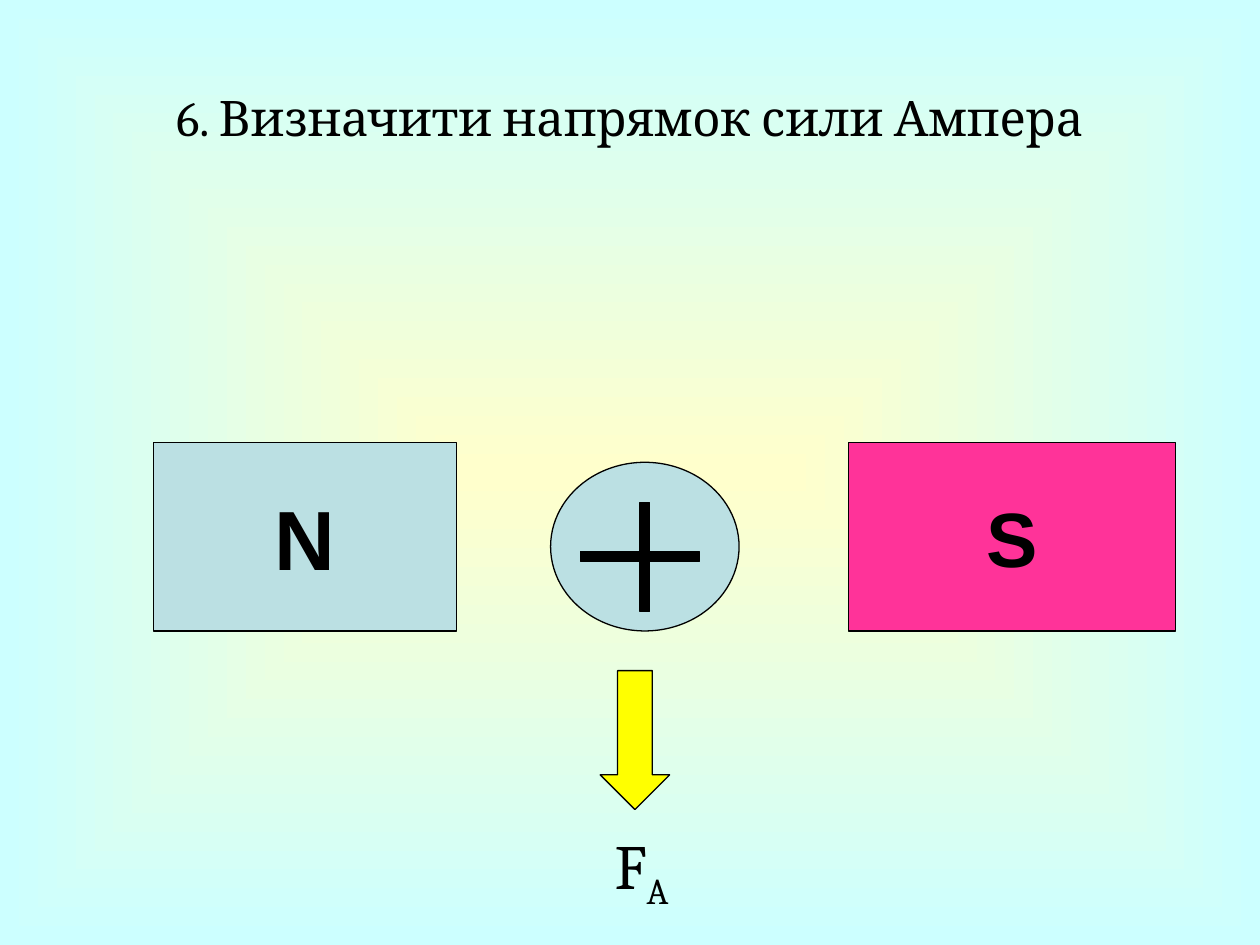
import pptx
import pptx.util
import pptx.dml.color
import pptx.enum.shapes
import pptx.enum.text
import pptx.oxml
import pptx.oxml.ns

Cm = pptx.util.Cm
Pt = pptx.util.Pt
Kind = pptx.enum.shapes.MSO_SHAPE
Align = pptx.enum.text.PP_ALIGN
Mid = pptx.enum.text.MSO_ANCHOR.MIDDLE
BLACK, PALE, PINK, GOLD = "000000", "BBE0E3", "FF3399", "FFFF00"
HEAD = {"name": "Cambria", "size": Pt(28)}
NORTH = {"name": "Arial", "size": Pt(48), "bold": True}
SOUTH = {**NORTH, "size": Pt(44)}
FORCE = {"name": "Cambria", "size": Pt(36)}


def rgb(code):
    return pptx.dml.color.RGBColor.from_string(code)


def apply(item, form):
    for key, val in form.items():
        setattr(item, key, val)


def place(item, box):
    apply(item, dict(zip(("left", "top", "width", "height"), map(Cm, box))))


def write(para, text, form):
    run = para.add_run()
    run.text = text
    apply(run.font, form)
    run.font.color.rgb = rgb(BLACK)
    return run


def paint(slide):
    """Fill the background with a gradient that spreads from the centre."""
    fill = slide.background.fill
    fill.gradient()
    for stop, code, pos in zip(fill.gradient_stops, ("FFFFCC", "CCFFFF"), (0, 1)):
        stop.color.rgb = rgb(code)
        stop.position = pos
    grad = slide.element.find(".//" + pptx.oxml.ns.qn("a:gradFill"))
    grad.remove(grad.find(pptx.oxml.ns.qn("a:lin")))
    grad.append(pptx.oxml.parse_xml(
        f'<a:path {pptx.oxml.ns.nsdecls("a")} path="shape">'
        '<a:fillToRect l="50000" t="50000" r="50000" b="50000"/></a:path>'))


def title(slide, text):
    head = slide.shapes.title
    place(head, (1.27, 0.76, 22.86, 3.18))
    head.text_frame.vertical_anchor = Mid
    para = head.text_frame.paragraphs[0]
    para.alignment = Align.CENTER
    write(para, text, HEAD)


def shape(slide, kind, box, code):
    item = slide.shapes.add_shape(kind, *map(Cm, box))
    item.shadow.inherit = False
    item.fill.solid()
    item.fill.fore_color.rgb = rgb(code)
    item.line.color.rgb = rgb(BLACK)
    item.line.width = Pt(0.75)
    return item


def pole(slide, box, code, text, form):
    frame = shape(slide, Kind.RECTANGLE, box, code).text_frame
    apply(frame, {"word_wrap": False, "vertical_anchor": Mid})
    para = frame.paragraphs[0]
    para.alignment = Align.CENTER
    write(para, text, form)


def label(slide, box, text, sub):
    frame = slide.shapes.add_textbox(*map(Cm, box)).text_frame
    apply(frame, {"word_wrap": True, "margin_left": Cm(1.09)})
    para = frame.paragraphs[0]
    write(para, text, FORCE)
    low = write(para, sub, FORCE)
    low.font._rPr.set("baseline", "-25000")


def main():
    deck = pptx.Presentation()
    apply(deck, {"slide_width": Cm(25.4), "slide_height": Cm(19.05)})
    slide = deck.slides.add_slide(deck.slide_layouts[5])
    paint(slide)
    title(slide, "6. Визначити напрямок сили Ампера")

    # Magnet poles
    pole(slide, (3.1, 8.92, 6.1, 3.8), PALE, "N", NORTH)
    pole(slide, (17.1, 8.92, 6.6, 3.8), PINK, "S", SOUTH)

    # Wire with the current flowing away from the viewer
    shape(slide, Kind.OVAL, (11.1, 9.32, 3.8, 3.4), PALE)
    for bar in ((11.7, 11.12, 2.4, 0.2), (12.9, 10.13, 0.2, 2.2)):
        shape(slide, Kind.RECTANGLE, bar, BLACK)

    # Force arrow and its name
    shape(slide, Kind.DOWN_ARROW, (12.1, 13.52, 1.4, 2.8), GOLD)
    label(slide, (11.3, 16.53, 4, 1.78), "F", "A")
    deck.save("out.pptx")


if __name__ == "__main__":
    main()
